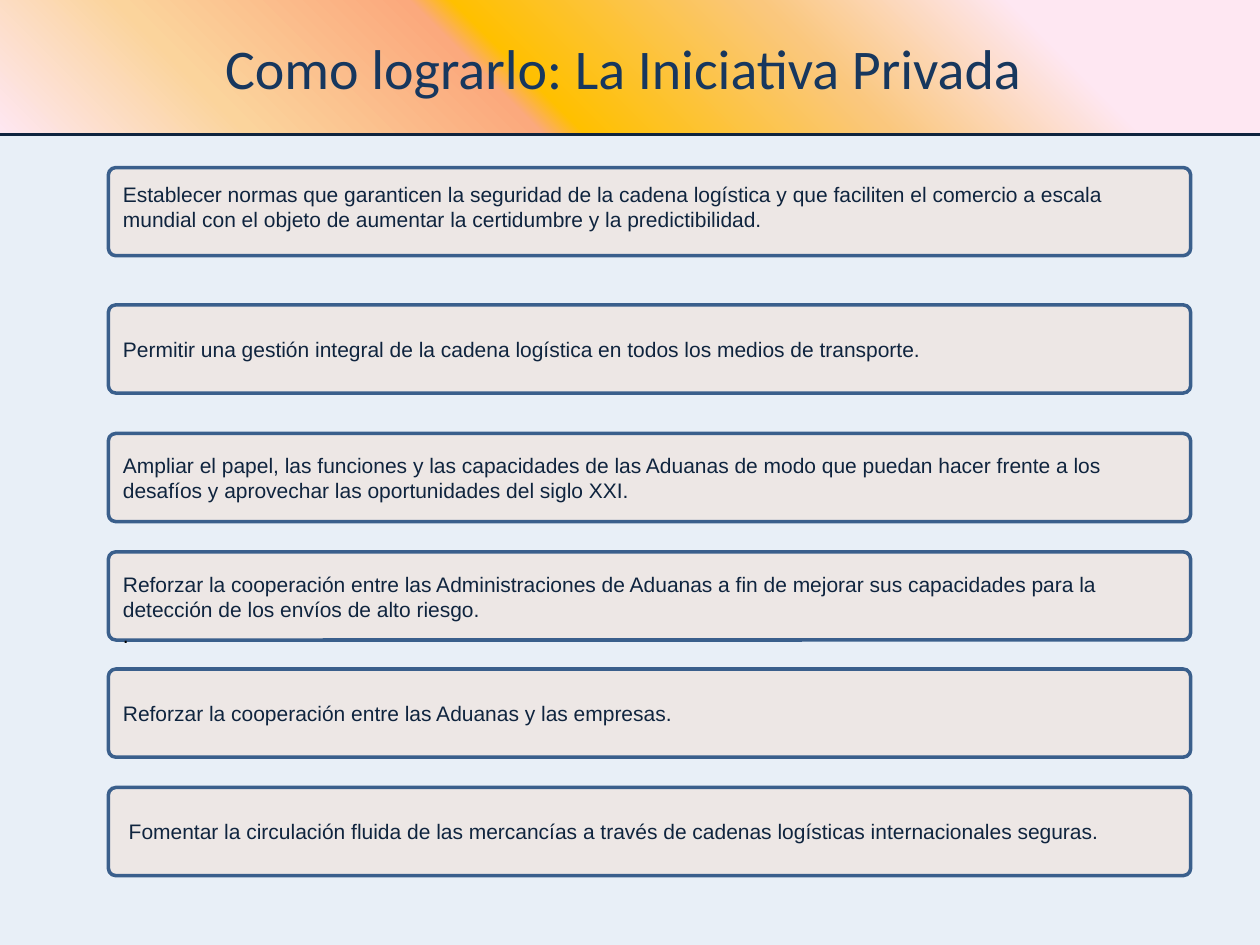
import dataclasses

import lxml.etree
import pptx
import pptx.dml.color
import pptx.enum.shapes
import pptx.enum.text
import pptx.oxml.ns
import pptx.util

Inches = pptx.util.Inches
Pt = pptx.util.Pt
qn = pptx.oxml.ns.qn
Shapes = pptx.enum.shapes.MSO_SHAPE
Anchor = pptx.enum.text.MSO_ANCHOR
Align = pptx.enum.text.PP_ALIGN


@dataclasses.dataclass(frozen=True)
class Theme:
    background: str = "E8EFF7"
    title_color: str = "17375E"
    ink: str = "0F243E"
    stray_ink: str = "000000"
    goal_fill: str = "FCD5B5"
    goal_opacity: int = 27
    goal_line: str = "3A5F8C"
    banner_stops: tuple = (
        (18, "FEE7F2"), (36, "FAC77D"), (58, "FFC000"),
        (61, "FBA97D"), (82, "FBD49C"), (100, "FEE7F2"),
    )
    title_font: str = "Calibri"
    body_font: str = "Arial"
    title_size: int = 32
    body_size: int = 12


@dataclasses.dataclass(frozen=True)
class Goal:
    top: float
    text: str
    anchor: Anchor = Anchor.MIDDLE
    inset_top: float = 0.05
    inset_bottom: float = 0.05


THEME = Theme()
TITLE = "Como lograrlo: La Iniciativa Privada "
GOALS = (
    Goal(1.33, "Establecer normas que garanticen la seguridad de la cadena logística y que "
               "faciliten el comercio a escala mundial con el objeto de aumentar la "
               "certidumbre y la predictibilidad.", inset_bottom=0.13),
    Goal(2.42, "Permitir una gestión integral de la cadena logística en todos los medios "
               "de transporte."),
    Goal(3.44, "Ampliar el papel, las funciones y las capacidades de las Aduanas de modo "
               "que puedan hacer frente a los desafíos y aprovechar las oportunidades "
               "del siglo XXI."),
    Goal(4.38, "Reforzar la cooperación entre las Administraciones de Aduanas a fin de "
               "mejorar sus capacidades para la detección de los envíos de alto riesgo.\n.",
         anchor=Anchor.TOP, inset_top=0.14),
    Goal(5.31, "Reforzar la cooperación entre las Aduanas y las empresas."),
    Goal(6.25, " Fomentar la circulación fluida de las mercancías a través de cadenas "
               "logísticas internacionales seguras."),
)


def rgb(value):
    return pptx.dml.color.RGBColor.from_string(value)


def style_text(para, font, size, color, align):
    para.alignment = align
    for span in para.runs:
        span.font.name = font
        span.font.size = Pt(size)
        span.font.color.rgb = rgb(color)


def fill_gradient(shape, stops, angle):
    """Fill with (percent, colour) stops; the angle runs clockwise."""
    shape.fill.gradient()
    shape.fill.gradient_angle = 360 - angle
    stop_list = shape._element.spPr.find(".//" + qn("a:gsLst"))
    for old_stop in list(stop_list):
        stop_list.remove(old_stop)
    for percent, color in stops:
        stop = lxml.etree.SubElement(stop_list, qn("a:gs"), pos=str(percent * 1000))
        lxml.etree.SubElement(stop, qn("a:srgbClr"), val=color)


def fill_translucent(shape, color, opacity):
    shape.fill.solid()
    shape.fill.fore_color.rgb = rgb(color)
    color_node = shape._element.spPr.find(qn("a:solidFill")).find(qn("a:srgbClr"))
    lxml.etree.SubElement(color_node, qn("a:alpha"), val=str(opacity * 1000))


def add_banner(page, left, top, width, height):
    box = page.shapes.add_shape(Shapes.RECTANGLE, left, top, width, height)
    box.shadow.inherit = False
    box.line.fill.background()
    fill_gradient(box, THEME.banner_stops, 135)
    frame = box.text_frame
    frame.word_wrap = True
    frame.vertical_anchor = Anchor.MIDDLE
    frame.text = TITLE
    style_text(frame.paragraphs[0], THEME.title_font, THEME.title_size,
               THEME.title_color, Align.CENTER)

    bottom = top + height
    rule = page.shapes.add_connector(pptx.enum.shapes.MSO_CONNECTOR.STRAIGHT,
                                     left, bottom, left + width, bottom)
    rule.line.color.rgb = rgb(THEME.ink)
    rule.line.width = Pt(1.5)
    lxml.etree.SubElement(rule._element.spPr, qn("a:effectLst"))


def add_goal(page, goal, left, top, width, height):
    box = page.shapes.add_shape(Shapes.ROUNDED_RECTANGLE, left, top, width, height)
    box.adjustments[0] = 0.085
    box.shadow.inherit = False
    fill_translucent(box, THEME.goal_fill, THEME.goal_opacity)
    box.line.color.rgb = rgb(THEME.goal_line)
    box.line.width = Pt(2)
    frame = box.text_frame
    frame.word_wrap = True
    frame.vertical_anchor = goal.anchor
    frame.margin_top = Inches(goal.inset_top)
    frame.margin_bottom = Inches(goal.inset_bottom)
    frame.text = goal.text
    for para in frame.paragraphs:
        color = THEME.stray_ink if para.text == "." else THEME.ink
        style_text(para, THEME.body_font, THEME.body_size, color, Align.LEFT)


def main():
    deck = pptx.Presentation()
    deck.slide_width, deck.slide_height = Inches(10), Inches(7.5)
    page = deck.slides.add_slide(deck.slide_layouts[6])
    page.background.fill.solid()
    page.background.fill.fore_color.rgb = rgb(THEME.background)

    for goal in GOALS:
        add_goal(page, goal, Inches(0.86), Inches(goal.top), Inches(8.59), Inches(0.7))
    add_banner(page, Inches(0), Inches(0), deck.slide_width, Inches(1.07))
    deck.save("out.pptx")


if __name__ == "__main__":
    main()
